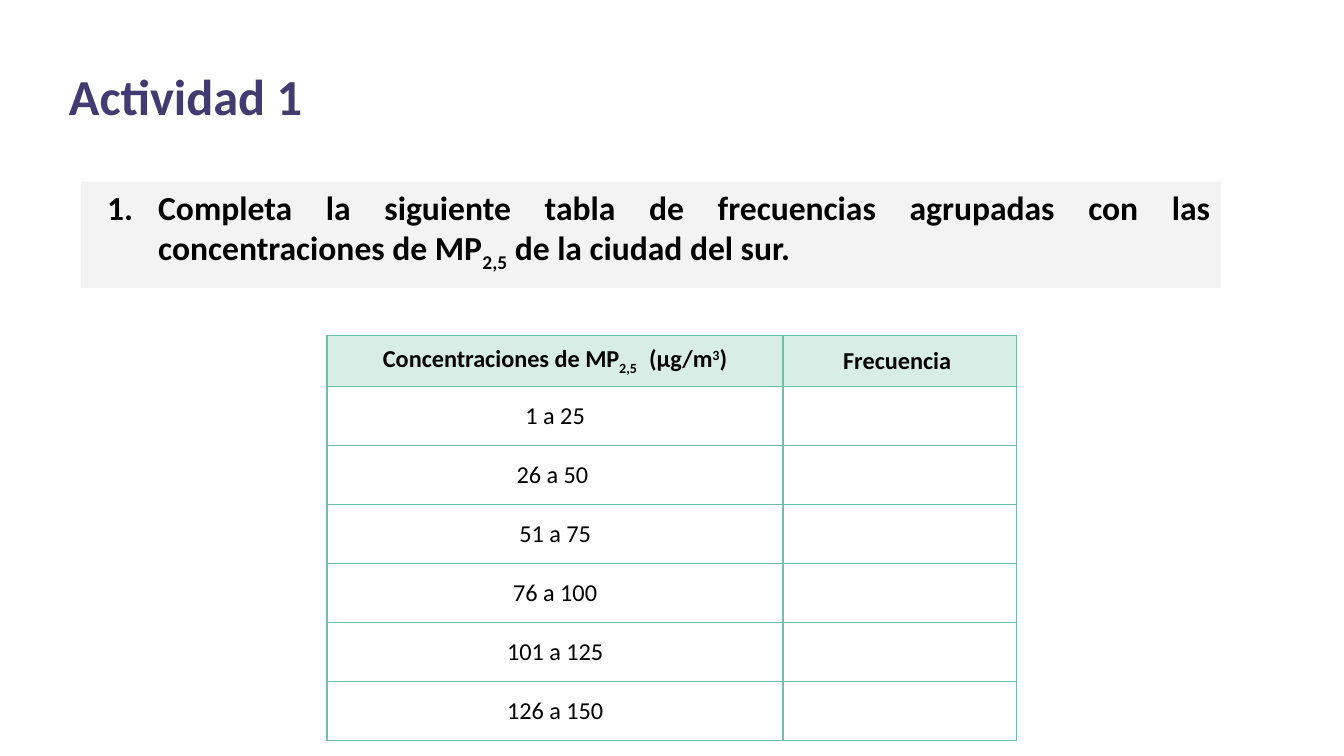
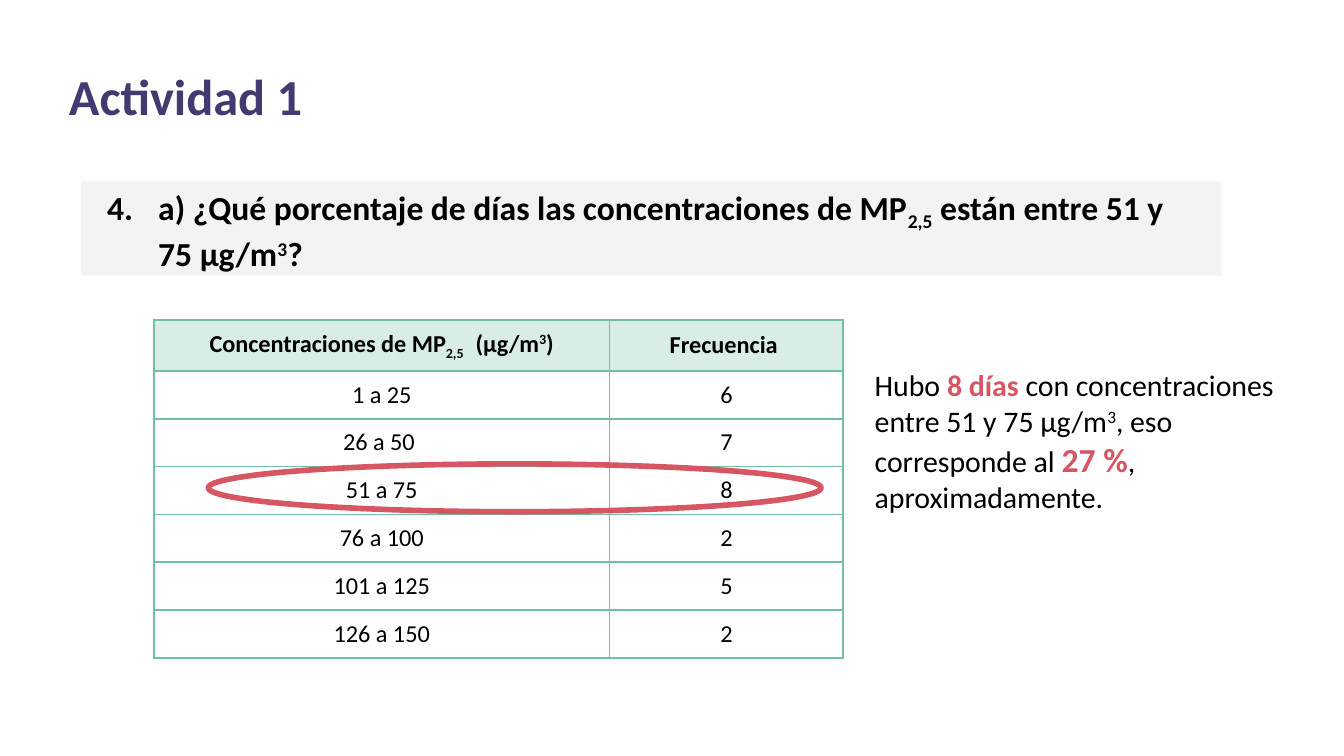
from dataclasses import dataclass

from lxml.etree import SubElement
from pptx import Presentation
from pptx.dml.color import RGBColor
from pptx.enum.shapes import MSO_SHAPE as Shape
from pptx.enum.text import MSO_ANCHOR as Anchor, PP_ALIGN as Align
from pptx.oxml.ns import qn
from pptx.util import Inches, Pt


@dataclass(frozen=True)
class Theme:
    """Colours, type sizes and insets in points shared by all slides."""
    font: str = "Calibri"
    purple: str = "423B71"
    black: str = "000000"
    band: str = "F3F3F3"
    header: str = "D8EDE6"
    border: str = "72BFA4"
    accent: str = "D65664"
    title_size: int = 27
    question_size: int = 18
    answer_size: int = 16
    table_size: int = 13
    side_inset: float = 5.4
    edge_inset: float = 2.7
    cell_inset: float = 4.8
    answer_inset: float = 7.2


@dataclass(frozen=True)
class Box:
    """A region in columns and rows of the slide grid."""
    left: float
    top: float
    width: float
    height: float

    def place(self):
        """Return the region as slide lengths."""
        return [grid(cells) for cells in (self.left, self.top, self.width, self.height)]


THEME = Theme()
CELL = 0.1
COLUMNS, ROWS = 100, 56.25
TITLE_BOX = Box(4.38, 4.45, 67, 5.3)
TABLE_COLUMNS = (33.9, 17.4)
HEADER_ROW = 3.8
SUB, SUPER = {"shift": -25}, {"shift": 30}
MP = ("2,5", SUB)
RANGES = ["1 a 25", "26 a 50 ", "51 a 75", "76 a 100", "101 a 125", "126 a 150"]
HEADINGS = [
    ["Concentraciones de MP", ("2,5  ", SUB), " (μg/m", ("3", SUPER), ")"],
    ["Frecuencia "],
]


def grid(cells):
    """Turn grid cells into a length."""
    return Inches(cells * CELL)


def rgb(code):
    """Turn a hex code into a colour."""
    return RGBColor.from_string(code)


def add_span(para, text, size, color=THEME.black, bold=False, shift=0):
    """Add one formatted run to a paragraph."""
    span = para.add_run()
    span.text = text
    font = span.font
    font.name, font.size, font.bold = THEME.font, Pt(size), bold
    font.color.rgb = rgb(color)
    if shift:
        span._r.get_or_add_rPr().set("baseline", str(shift * 1000))


def write(para, parts, align=Align.LEFT, **style):
    """Write plain strings and (text, format) pairs into a paragraph."""
    para.alignment = align
    for part in parts:
        text, extra = (part, {}) if isinstance(part, str) else part
        add_span(para, text, **{**style, **extra})


def set_insets(target, side, edge, anchor):
    """Set the insets and vertical anchor of a text frame or cell."""
    target.margin_left = target.margin_right = Pt(side)
    target.margin_top = target.margin_bottom = Pt(edge)
    target.vertical_anchor = anchor


def indent(para, number=None):
    """Indent a paragraph, with a hanging number if one is given."""
    properties = para._p.get_or_add_pPr()
    properties.set("marL", str(Inches(0.5)))
    properties.set("indent", str(Inches(-0.38) if number else 0))
    if number:
        color = SubElement(properties, qn("a:buClr"))
        SubElement(color, qn("a:srgbClr"), val=THEME.black)
        SubElement(properties, qn("a:buAutoNum"), type="arabicPeriod", startAt=str(number))


def add_page(deck, title):
    """Add a slide with the shared title style."""
    page = deck.slides.add_slide(deck.slide_layouts[5])
    holder = page.shapes.title
    holder.left, holder.top, holder.width, holder.height = TITLE_BOX.place()
    frame = holder.text_frame
    frame.word_wrap = True
    set_insets(frame, THEME.side_inset, THEME.edge_inset, Anchor.MIDDLE)
    write(frame.paragraphs[0], [title],
          size=THEME.title_size, color=THEME.purple, bold=True)
    return page


def add_question(page, box, number, lines):
    """Add the grey band with a numbered question."""
    band = page.shapes.add_shape(Shape.RECTANGLE, *box.place())
    band.shadow.inherit = False
    band.fill.solid()
    band.fill.fore_color.rgb = rgb(THEME.band)
    band.line.fill.background()
    frame = band.text_frame
    frame.word_wrap = True
    set_insets(frame, THEME.side_inset, THEME.edge_inset, Anchor.TOP)
    for index, parts in enumerate(lines):
        para = frame.add_paragraph() if index else frame.paragraphs[0]
        indent(para, None if index else number)
        write(para, parts, Align.JUSTIFY, size=THEME.question_size, bold=True)


def format_cell(cell, parts, is_header):
    """Set the borders, fill and text of a table cell."""
    properties = cell._tc.get_or_add_tcPr()
    for side in ("lnL", "lnR", "lnT", "lnB"):
        edge = SubElement(properties, qn(f"a:{side}"), w=str(Pt(1)))
        SubElement(SubElement(edge, qn("a:solidFill")), qn("a:srgbClr"), val=THEME.border)
    if is_header:
        cell.fill.solid()
        cell.fill.fore_color.rgb = rgb(THEME.header)
    else:
        cell.fill.background()
    set_insets(cell, THEME.cell_inset, THEME.cell_inset, Anchor.MIDDLE)
    if parts:
        write(cell.text_frame.paragraphs[0], parts, Align.CENTER,
              size=THEME.table_size, bold=is_header)


def add_frequencies(page, left, top, row_height, counts):
    """Add the frequency table and return its box."""
    body = [[[label], [count] if count else []] for label, count in zip(RANGES, counts)]
    rows = [HEADINGS, *body]
    box = Box(left, top, sum(TABLE_COLUMNS), HEADER_ROW + row_height * len(body))
    table = page.shapes.add_table(len(rows), len(TABLE_COLUMNS), *box.place()).table
    table.first_row = table.horz_banding = False
    for column, width in zip(table.columns, TABLE_COLUMNS):
        column.width = grid(width)
    for index, parts_by_cell in enumerate(rows):
        table.rows[index].height = grid(row_height if index else HEADER_ROW)
        for cell, parts in zip(table.rows[index].cells, parts_by_cell):
            format_cell(cell, parts, index == 0)
    return box


def circle_row(page, box, row_height, row):
    """Ring one body row of the table in the given box."""
    top = box.top + HEADER_ROW + row * row_height - 0.2
    ring_box = Box(box.left + 4.05, top, 45.6, row_height)
    ring = page.shapes.add_shape(Shape.OVAL, *ring_box.place())
    ring.shadow.inherit = False
    ring.fill.background()
    ring.line.color.rgb = rgb(THEME.accent)
    ring.line.width = Pt(3)


def add_answer(page, box, parts):
    """Add the answer text beside the table."""
    frame = page.shapes.add_textbox(*box.place()).text_frame
    frame.word_wrap = True
    set_insets(frame, THEME.answer_inset, THEME.answer_inset, Anchor.TOP)
    write(frame.paragraphs[0], parts, size=THEME.answer_size)


def build_blank_table(deck):
    """Build the slide with the table to complete."""
    page = add_page(deck, "Actividad 1")
    add_question(page, Box(6.02, 13.52, 84.84, 7.9), 1, [[
        "Completa la siguiente tabla de frecuencias agrupadas con las concentraciones de MP",
        MP, " de la ciudad del sur.",
    ]])
    add_frequencies(page, 24.35, 24.95, 4.39, [""] * len(RANGES))


def build_solution(deck):
    """Build the slide with the filled table and its answer."""
    page = add_page(deck, "Actividad 1")
    row_height = 3.56
    box = add_frequencies(page, 11.45, 23.8, row_height, "678252")
    circle_row(page, box, row_height, RANGES.index("51 a 75"))
    strong = {"color": THEME.accent, "bold": True}
    add_answer(page, Box(64.1, 26.3, 33.8, 13.1), [
        "Hubo ", ("8 días ", strong), "con concentraciones entre 51 y 75 μg/m",
        ("3", SUPER), ", eso corresponde al ",
        ("27 %", {**strong, "size": THEME.question_size}), ", aproximadamente.",
    ])
    add_question(page, Box(6.02, 13.52, 84.84, 7), 4, [
        ["a) ¿Qué porcentaje de días las concentraciones de MP", MP, " están entre 51 y "],
        ["75 μg/m", ("3", SUPER), "?"],
    ])


def main():
    """Build and save the deck."""
    deck = Presentation()
    deck.slide_width, deck.slide_height = grid(COLUMNS), grid(ROWS)
    build_blank_table(deck)
    build_solution(deck)
    deck.save("out.pptx")


if __name__ == "__main__":
    main()
